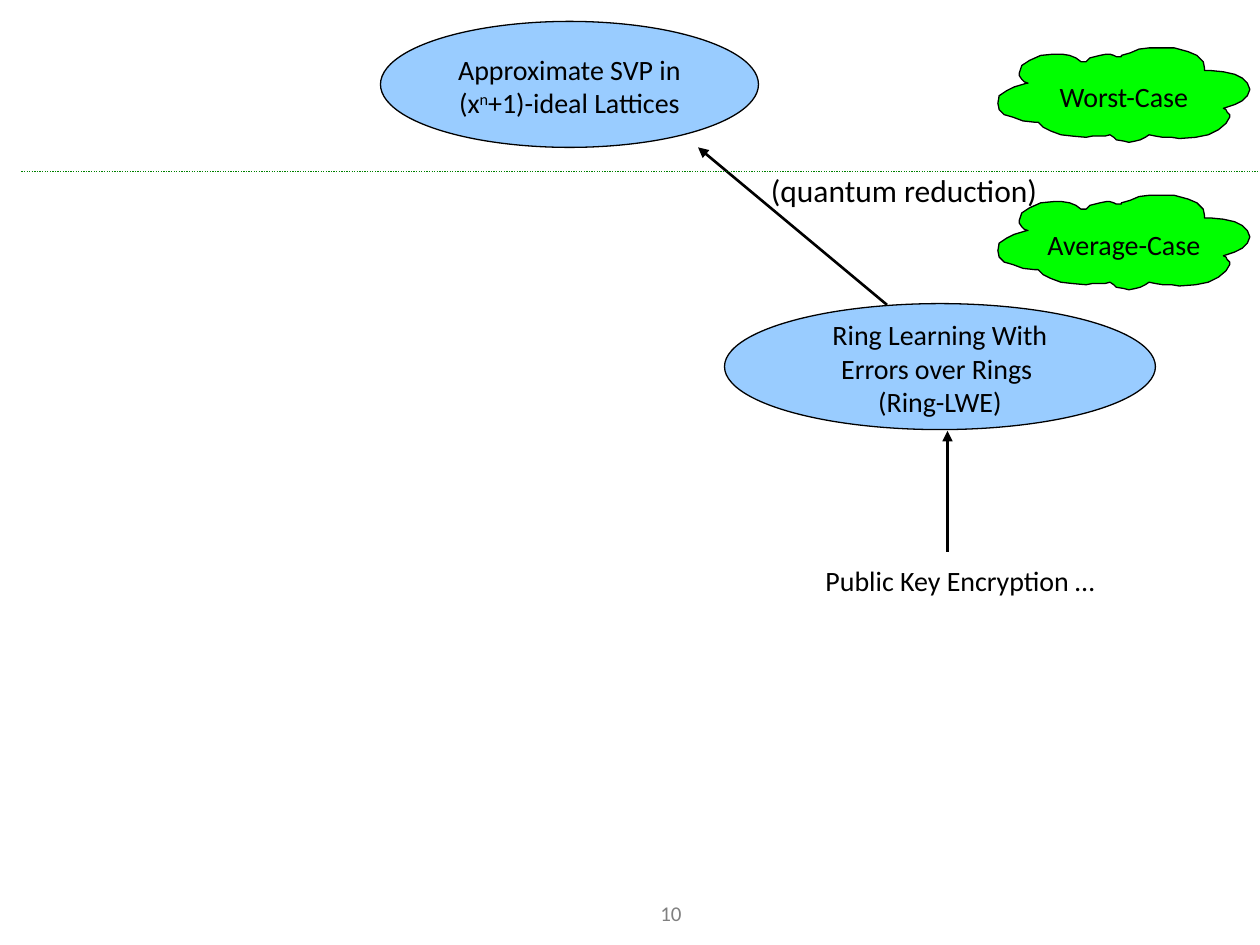
from dataclasses import dataclass
from typing import Optional

from lxml import etree
from pptx import Presentation
from pptx.dml.color import RGBColor
from pptx.enum import dml, shapes, text
from pptx.oxml import ns
from pptx.util import Inches, Pt


@dataclass(frozen=True)
class Theme:
    font: str = "Calibri"
    ink: str = "000000"
    muted: str = "808080"
    problem: str = "99CCFF"
    cloud: str = "00FF00"
    divider: str = "008000"
    body: float = 16
    note: float = 18
    page: float = 12
    thin: float = 0.75
    arrow: float = 1.5


THEME = Theme()
CENTER = text.PP_ALIGN.CENTER


@dataclass(frozen=True)
class Box:
    left: float
    top: float
    width: float
    height: float

    def emu(self) -> tuple:
        return tuple(Inches(v) for v in (self.left, self.top, self.width, self.height))


@dataclass(frozen=True)
class Problem:
    box: Box
    wording: str
    superscript: Optional[str] = None


@dataclass(frozen=True)
class Cloud:
    left: float
    top: float
    wording: str


@dataclass(frozen=True)
class Label:
    box: Box
    wording: str
    size: float
    color: str = THEME.ink
    align: text.PP_ALIGN = CENTER
    spacing: float = 1.0
    wrap: bool = True


@dataclass(frozen=True)
class Line:
    start: tuple
    end: tuple
    color: str = THEME.ink
    width: float = THEME.arrow
    arrow: bool = True


PROBLEMS = [
    Problem(Box(3.02, 0.17, 3, 1), "Approximate SVP in\n(xn+1)-ideal Lattices", "n+1"),
    Problem(Box(5.75, 2.41, 3.42, 1),
            "Ring Learning With Errors over Rings \n(Ring-LWE)"),
]
LINES = [
    Line((5.54, 1.17), (7.04, 2.42)),
    Line((7.52, 3.42), (7.52, 4.38)),
    Line((0.17, 1.36), (10.17, 1.36), THEME.divider, THEME.thin, arrow=False),
]
CLOUDS = [Cloud(7.92, 0.38, "Worst-Case"), Cloud(7.92, 1.55, "Average-Case")]
LABELS = [
    Label(Box(4.71, 7.1, 1.23, 0.4), "10", THEME.page, THEME.muted),
    Label(Box(5.12, 4.38, 5, 2.2), "Public Key Encryption …", THEME.body, spacing=1.17),
    Label(Box(6.02, 1.31, 2.52, 0.4), "(quantum reduction)", THEME.note,
          align=text.PP_ALIGN.LEFT, wrap=False),
]

# Cloud outline in hundredths of an inch from its top left corner
CLOUD_OUTLINE = [
    (179, 48), (181, 49), (182, 51), (184, 53), (184, 55), (181, 60), (175, 65),
    (167, 69), (157, 71), (144, 72), (138, 71), (131, 71), (125, 70), (120, 69),
    (117, 71), (113, 73), (109, 74), (104, 75), (100, 74), (94, 73), (92, 71),
    (89, 69), (85, 70), (79, 70), (75, 70), (70, 71), (59, 70), (50, 69),
    (42, 66), (36, 63), (32, 59), (29, 59), (20, 58), (12, 55), (5, 53),
    (1, 49), (0, 44), (1, 38), (7, 34), (13, 31), (23, 28), (24, 28),
    (21, 27), (19, 25), (17, 22), (17, 20), (19, 14), (25, 10), (34, 6),
    (44, 5), (51, 5), (57, 6), (62, 8), (66, 11), (70, 11), (73, 8),
    (77, 7), (81, 6), (86, 5), (89, 5), (92, 6), (94, 7), (98, 7),
    (98, 6), (105, 4), (112, 1), (120, 0), (129, 0), (140, 0), (151, 3),
    (158, 6), (163, 11), (164, 16), (164, 18), (166, 18), (169, 18), (179, 19),
    (188, 21), (194, 24), (198, 28), (200, 33), (198, 38), (194, 42), (188, 45),
]


def rgb(color: str) -> RGBColor:
    return RGBColor.from_string(color)


def write(frame, wording: str, size: float, color: str = THEME.ink,
          align: text.PP_ALIGN = CENTER) -> None:
    frame.text = wording
    for paragraph in frame.paragraphs:
        paragraph.alignment = align
        for run in paragraph.runs:
            style(run, size, color)


def style(run, size: float, color: str) -> None:
    run.font.name = THEME.font
    run.font.size = Pt(size)
    run.font.color.rgb = rgb(color)


def finish(shape, fill: str, wording: str, wrap: bool) -> None:
    """Apply the fill, outline and centred wording shared by ellipses and clouds."""
    shape.shadow.inherit = False
    shape.fill.solid()
    shape.fill.fore_color.rgb = rgb(fill)
    shape.line.color.rgb = rgb(THEME.ink)
    shape.line.width = Pt(THEME.thin)
    frame = shape.text_frame
    frame.word_wrap = wrap
    frame.vertical_anchor = text.MSO_ANCHOR.MIDDLE
    frame.margin_top = Inches(0.07)
    write(frame, wording, THEME.body)


def raise_exponent(paragraph, exponent: str, following: str) -> None:
    """Split the paragraph's run so that its exponent is superscript."""
    base = paragraph.runs[0]
    before, after = base.text.split(exponent + following, 1)
    base.text = before
    for part in (exponent, following + after):
        run = paragraph.add_run()
        run.text = part
        style(run, THEME.body, THEME.ink)
    paragraph.runs[1].font._element.set("baseline", "30000")


def draw_problem(slide, problem: Problem) -> None:
    ellipse = slide.shapes.add_shape(shapes.MSO_SHAPE.OVAL, *problem.box.emu())
    finish(ellipse, THEME.problem, problem.wording, wrap=True)
    if problem.superscript:
        raise_exponent(ellipse.text_frame.paragraphs[-1],
                       problem.superscript[0], problem.superscript[1:])


def draw_cloud(slide, cloud: Cloud) -> None:
    builder = slide.shapes.build_freeform(*CLOUD_OUTLINE[0], scale=Inches(0.01))
    builder.add_line_segments(CLOUD_OUTLINE[1:], close=True)
    outline = builder.convert_to_shape(Inches(cloud.left), Inches(cloud.top))
    finish(outline, THEME.cloud, cloud.wording, wrap=False)


def draw_line(slide, line: Line) -> None:
    connector = slide.shapes.add_connector(
        shapes.MSO_CONNECTOR.STRAIGHT, *(Inches(v) for v in line.start + line.end))
    connector.line.color.rgb = rgb(line.color)
    connector.line.width = Pt(line.width)
    if line.arrow:
        outline = connector.line._get_or_add_ln()
        etree.SubElement(outline, ns.qn("a:headEnd"), type="triangle")
    else:
        connector.line.dash_style = dml.MSO_LINE.ROUND_DOT
    etree.SubElement(connector._element.spPr, ns.qn("a:effectLst"))


def draw_label(slide, label: Label) -> None:
    frame = slide.shapes.add_textbox(*label.box.emu()).text_frame
    frame.word_wrap = label.wrap
    write(frame, label.wording, label.size, label.color, label.align)
    frame.paragraphs[0].line_spacing = label.spacing


def main() -> None:
    deck = Presentation()
    deck.slide_width, deck.slide_height = Inches(10), Inches(7.5)
    slide = deck.slides.add_slide(deck.slide_layouts[6])
    for draw, items in ((draw_problem, PROBLEMS), (draw_line, LINES),
                        (draw_cloud, CLOUDS), (draw_label, LABELS)):
        for item in items:
            draw(slide, item)
    deck.save("out.pptx")


if __name__ == "__main__":
    main()
